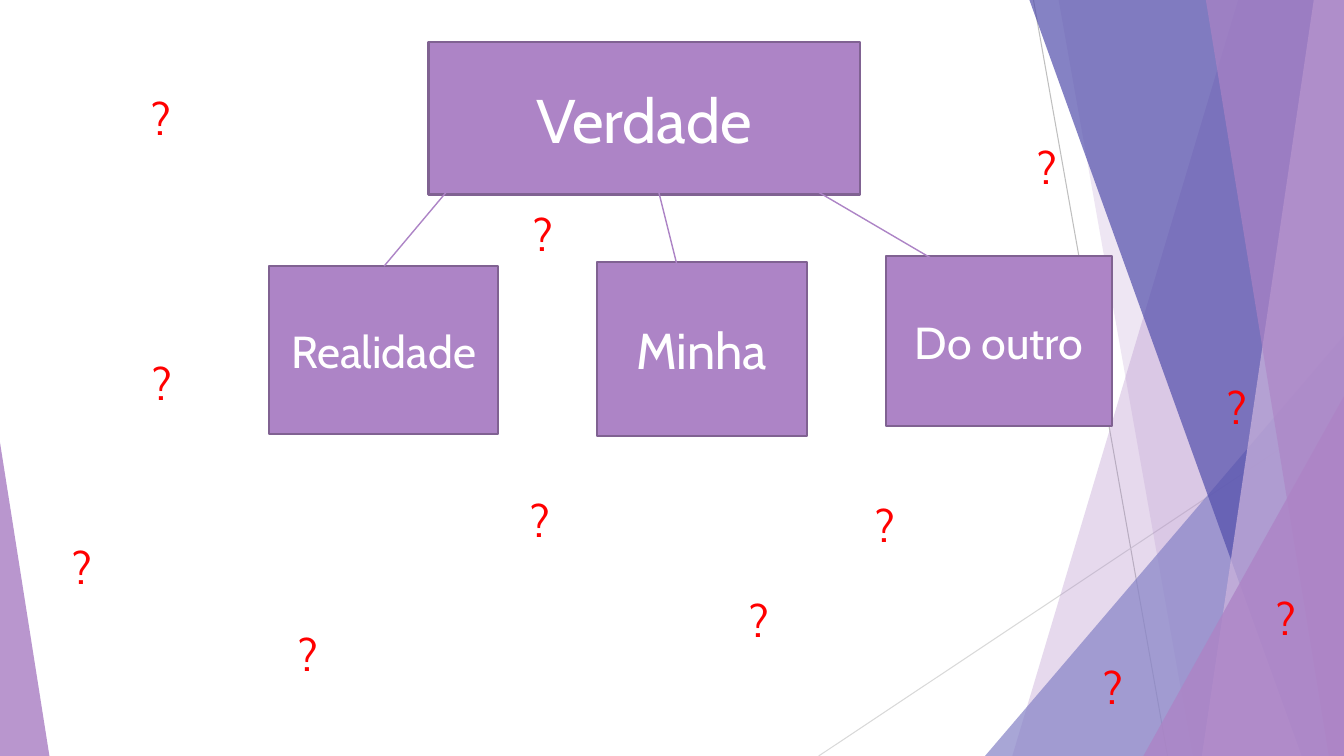
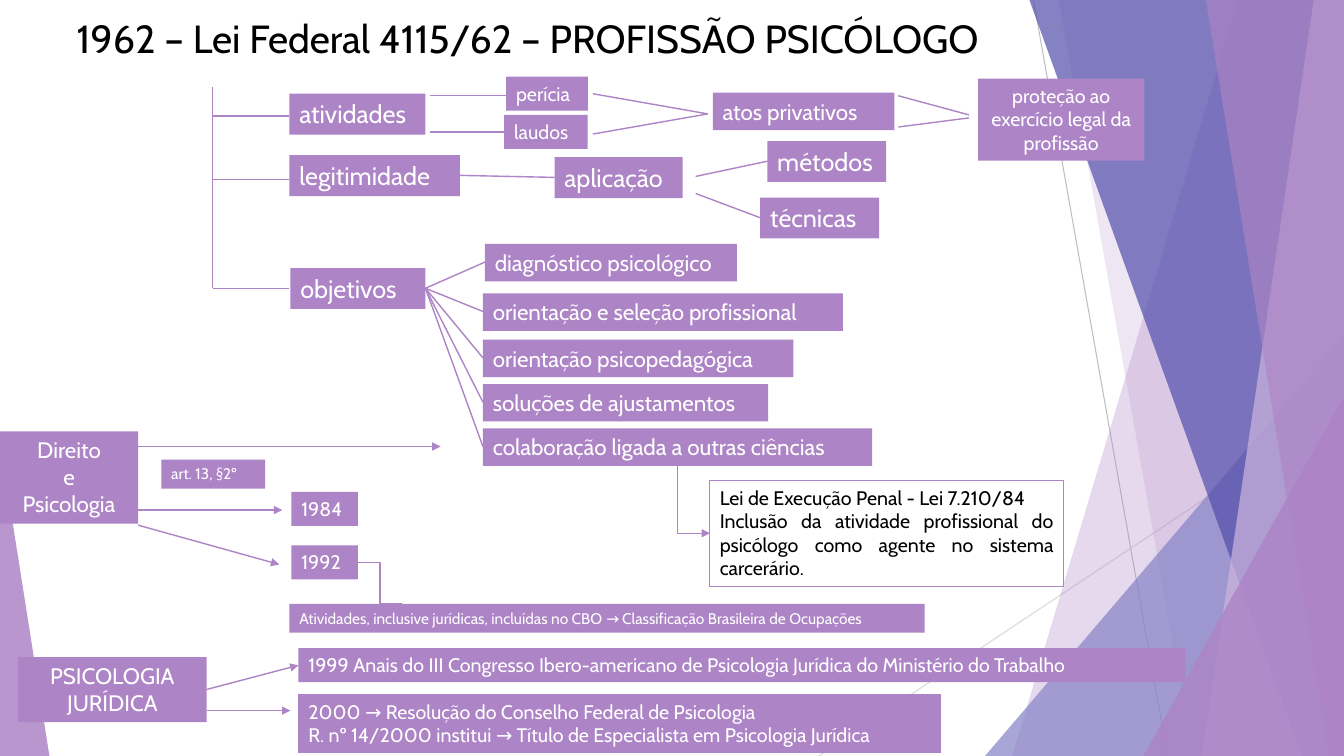
import pptx
import pptx.util
import pptx.dml.color
import pptx.enum.shapes
import pptx.enum.text
import pptx.oxml
import pptx.oxml.ns

Inches, Pt = pptx.util.Inches, pptx.util.Pt
SHAPE = pptx.enum.shapes.MSO_SHAPE
CONNECTOR = pptx.enum.shapes.MSO_CONNECTOR
ALIGN = pptx.enum.text.PP_ALIGN
ANCHOR = pptx.enum.text.MSO_ANCHOR
AUTO = pptx.enum.text.MSO_AUTO_SIZE
qn = pptx.oxml.ns.qn

# Shared look
WIDTH, HEIGHT = 13.33, 7.5
FONT = "Cabin"
PURPLE, EDGE, WHITE, BLACK, RED = "AD84C6", "806292", "FFFFFF", "000000", "FF0000"
LINE_PITCH = 0.017  # inches of line height per point of text


def rgb(value):
    return pptx.dml.color.RGBColor.from_string(value)


def add_xml(parent, tag, **attrs):
    el = pptx.oxml.parse_xml(f"<{tag} {pptx.oxml.ns.nsdecls('a')}/>")
    for name, value in attrs.items():
        el.set(name, value)
    parent.append(el)


def paint(sp, color, alpha=None):
    sp.fill.solid()
    sp.fill.fore_color.rgb = rgb(color)
    if alpha is not None:
        clr = sp.element.spPr.find(qn("a:solidFill")).find(qn("a:srgbClr"))
        add_xml(clr, "a:alpha", val=str(alpha * 1000))


def outline(sp, color, width):
    sp.line.color.rgb = rgb(color)
    sp.line.width = Pt(width)


def write(tf, lines, size, color=WHITE, align=ALIGN.LEFT, anchor=ANCHOR.TOP, before=0):
    tf.word_wrap = True
    tf.vertical_anchor = anchor
    tf.text = "\n".join(lines)
    for p in tf.paragraphs:
        p.alignment = align
        p.space_before = Pt(before)
        p.font.name, p.font.size = FONT, Pt(size)
        p.font.color.rgb = rgb(color)


class Area:
    """A region of a slide; all positions are relative to its corner."""

    def __init__(self, s, left, top):
        self.s, self.left, self.top = s, left, top

    def place(self, x, y):
        return Inches(self.left + x), Inches(self.top + y)

    def shape(self, kind, x, y, w, h):
        sp = self.s.shapes.add_shape(kind, *self.place(x, y), Inches(w), Inches(h))
        sp.shadow.inherit = False
        sp.line.fill.background()
        return sp

    def label(self, x, y, w, *lines, size=14, rows=None, align=ALIGN.LEFT,
              fill=PURPLE, color=WHITE, border=None):
        h = 0.1 + (rows or len(lines)) * size * LINE_PITCH
        sp = self.s.shapes.add_textbox(*self.place(x, y), Inches(w), Inches(h))
        write(sp.text_frame, lines, size, color, align)
        sp.text_frame.auto_size = AUTO.SHAPE_TO_FIT_TEXT
        if fill:
            paint(sp, fill)
        if border:
            outline(sp, border, 0.75)

    def line(self, x1, y1, x2, y2, color=PURPLE, width=1, arrow=False,
             kind=CONNECTOR.STRAIGHT):
        c = self.s.shapes.add_connector(kind, *self.place(x1, y1), *self.place(x2, y2))
        outline(c, color, width)
        if arrow:
            add_xml(c.element.spPr.find(qn("a:ln")), "a:tailEnd", type="triangle")
        add_xml(c.element.spPr, "a:effectLst")
        return c

    def down_then_right(self, x1, y1, x2, y2):
        # One-corner elbow: a flipped bentConnector2 turned by 270 degrees
        cx, cy = (x1 + x2) / 2, (y1 + y2) / 2
        dx, dy = (y2 - y1) / 2, (x2 - x1) / 2
        c = self.line(cx + dx, cy - dy, cx - dx, cy + dy, arrow=True,
                      kind=CONNECTOR.ELBOW)
        c.element.spPr.find(qn("a:prstGeom")).set("prst", "bentConnector2")
        c.element.spPr.find(qn("a:xfrm")).set("rot", "16200000")


# Background facets, kept on the slide master
def facets(s, master):
    a = Area(s, 0, 0)
    first = len(s.shapes)

    def facet(top_x, bottom_x, color, alpha):
        points = [(top_x, 0), (WIDTH, 0), (WIDTH, HEIGHT), (bottom_x, HEIGHT)]
        points = [a.place(*pt) for pt in points]
        fb = s.shapes.build_freeform(*points[0], scale=1.0)
        fb.add_line_segments(points[1:], close=True)
        sp = fb.convert_to_shape()
        sp.shadow.inherit = False
        sp.line.fill.background()
        paint(sp, color, alpha)

    def corner(x, y, w, tip, color, alpha):
        sp = a.shape(SHAPE.ISOSCELES_TRIANGLE, x, y, w, HEIGHT - y)
        sp.adjustments[0] = tip
        paint(sp, color, alpha)

    a.line(10.25, 0, 11.58, HEIGHT, "BFBFBF", 0.75)
    a.line(WIDTH, 4.03, 8.12, HEIGHT, "D9D9D9", 0.75)
    facet(12.28, 10.04, PURPLE, 30)
    facet(10.5, 11.83, PURPLE, 20)
    corner(9.77, 3.33, 3.56, 1, "8784C7", 72)
    facet(10.21, 12.91, "524EAB", 70)
    facet(13.03, 11.92, "CEB5DD", 70)
    facet(11.96, 13.18, PURPLE, 65)
    corner(11.34, 3.93, 1.99, 1, PURPLE, 80)
    corner(0, 4.39, 0.49, 0, PURPLE, 85)

    tree = master.shapes.element
    for i, sp in enumerate(list(s.shapes)[first:]):
        sp.element.xpath(".//p:cNvPr")[0].set("id", str(100 + i))
        tree.insert(2 + i, sp.element)


# Slide 1: truth and its three sides
def truth_diagram(s, left, top):
    a = Area(s, left, top)
    for text, size, x, y, w, h in [
        ("Do outro", 32, 6.12, 2.12, 2.24, 1.69),
        ("Minha", 36, 3.25, 2.18, 2.08, 1.73),
        ("Realidade", 32, 0, 2.22, 2.27, 1.67),
        ("Verdade", 44, 1.58, 0, 4.28, 1.51),
    ]:
        sp = a.shape(SHAPE.RECTANGLE, x, y, w, h)
        paint(sp, PURPLE)
        outline(sp, EDGE, 1.5)
        write(sp.text_frame, [text], size, align=ALIGN.CENTER, anchor=ANCHOR.MIDDLE)
    for x1, x2, y2 in [(1.77, 1.14, 2.22), (5.42, 6.75, 2.25), (3.86, 4.05, 2.23)]:
        a.line(x1, 1.47, x2, y2)


def question_marks(s, left, top):
    a = Area(s, left, top)
    for x, y in [(4.9, 1.99), (1.13, 3.47), (12.27, 5.8), (4.87, 4.82),
                 (0.33, 5.29), (1.12, 0.84), (11.79, 3.7), (8.3, 4.87),
                 (7.05, 5.82), (10.56, 6.48), (9.9, 1.32), (2.57, 6.15)]:
        sp = s.shapes.add_textbox(*a.place(x, y), Inches(0.97), Inches(0.66))
        write(sp.text_frame, ["?"], 32, RED, ALIGN.CENTER, ANCHOR.MIDDLE, before=10)


# Slide 2: the regions of the map
def title(s, text, left, top, w, h):
    sp = s.shapes.title
    sp.left, sp.top, sp.width, sp.height = map(Inches, (left, top, w, h))
    write(sp.text_frame, [text], 28, BLACK)


def main_branches(s, left, top):
    a = Area(s, left, top)
    for y in (0.39, 1.02, 2.1):
        a.line(0, y, 0.76, y)
    a.line(0, 0.1, 0, 2.1)
    a.label(0.76, 0.17, 1.35, "atividades", size=18)
    a.label(0.76, 0.78, 1.69, "legitimidade", size=18)
    a.label(0.77, 1.9, 1.34, "objetivos", size=18)


def activities(s, left, top):
    a = Area(s, left, top)
    for y in (0.19, 0.55):
        a.line(0, y, 0.75, y)
    a.label(0.75, 0, 0.81, "perícia")
    a.label(0.73, 0.38, 0.83, "laudos")
    for y in (0.17, 0.57):
        a.line(1.61, y, 2.75, 0.37)
    a.label(2.8, 0.16, 1.8, "atos privativos", size=16)
    a.line(4.64, 0.19, 5.34, 0.38)
    a.line(4.64, 0.5, 5.34, 0.41)
    a.label(5.43, 0.02, 1.65, "proteção ao exercício legal da profissão",
            rows=3, align=ALIGN.CENTER)


def legitimacy(s, left, top):
    a = Area(s, left, top)
    a.label(0.94, 0.16, 1.27, "aplicação", size=18)
    a.label(3.05, 0, 1.18, "métodos", size=18)
    a.label(2.98, 0.56, 1.18, "técnicas", size=18)
    a.line(0, 0.34, 0.94, 0.36)
    a.line(2.34, 0.35, 3.05, 0.2)
    a.line(2.34, 0.52, 2.98, 0.76)


def objectives(s, left, top):
    a = Area(s, left, top)
    for text, x, y, w in [
        ("diagnóstico psicológico", 0.59, 0, 2.5),
        ("orientação e seleção profissional", 0.57, 0.49, 3.57),
        ("orientação psicopedagógica", 0.57, 0.95, 3.08),
        ("soluções de ajustamentos", 0.57, 1.39, 2.83),
        ("colaboração ligada a outras ciências", 0.57, 1.83, 3.86),
    ]:
        a.label(x, y, w, text, size=16)
        a.line(0, 0.44, x, y + 0.18)
    a.label(2.82, 2.35, 3.51, "Lei de Execução Penal - Lei 7.210/84",
            "Inclusão da atividade profissional do psicólogo como agente "
            "no sistema carcerário.",
            rows=4, align=ALIGN.JUSTIFY, fill=None, color=BLACK, border=PURPLE)
    a.down_then_right(2.5, 2.2, 2.82, 2.87)


def law_and_psychology(s, left, top):
    a = Area(s, left, top)
    a.label(0, 0, 1.37, "Direito", "e", "Psicologia", size=16, align=ALIGN.CENTER)
    a.label(1.6, 0.28, 1.03, "art. 13, §2º", size=11)
    a.label(2.89, 0.6, 0.66, "1984")
    a.label(2.89, 1.13, 0.66, "1992")
    a.label(2.87, 1.71, 6.3, "Atividades, inclusive jurídicas, incluídas no CBO → "
            "Classificação Brasileira de Ocupações", size=11, align=ALIGN.JUSTIFY)
    for y1, x2, y2 in [(0.15, 4.37, 0.15), (0.78, 2.8, 0.78), (0.93, 2.77, 1.32)]:
        a.line(1.37, y1, x2, y2, arrow=True)
    a.line(3.55, 1.3, 3.99, 1.71, kind=CONNECTOR.ELBOW)


def legal_psychology(s, left, top):
    a = Area(s, left, top)
    a.label(0, 0.09, 1.87, "PSICOLOGIA JURÍDICA", size=16, rows=2, align=ALIGN.CENTER)
    a.label(2.78, 0, 8.8, "1999 Anais do III Congresso Ibero-americano de Psicologia "
            "Jurídica do Ministério do Trabalho")
    a.label(2.78, 0.46, 6.37, "2000 → Resolução do Conselho Federal de Psicologia",
            "R. nº 14/2000 institui → Título de Especialista em Psicologia Jurídica",
            border=PURPLE)
    a.line(1.87, 0.41, 2.78, 0.17, arrow=True)
    a.line(1.87, 0.62, 2.7, 0.62, arrow=True)


def main():
    prs = pptx.Presentation()
    prs.slide_width, prs.slide_height = Inches(WIDTH), Inches(HEIGHT)
    title_only, blank = prs.slide_layouts[5], prs.slide_layouts[6]

    s = prs.slides.add_slide(blank)
    facets(s, prs.slide_master)
    truth_diagram(s, 2.67, 0.42)
    question_marks(s, 0, 0)

    s = prs.slides.add_slide(title_only)
    title(s, "1962 – Lei Federal 4115/62 – PROFISSÃO PSICÓLOGO", 0.66, 0.09, 10.44, 0.88)
    main_branches(s, 2.11, 0.76)
    activities(s, 4.27, 0.76)
    legitimacy(s, 4.56, 1.4)
    objectives(s, 4.22, 2.42)
    law_and_psychology(s, 0, 4.28)
    legal_psychology(s, 0.18, 6.43)

    prs.save("out.pptx")


if __name__ == "__main__":
    main()
